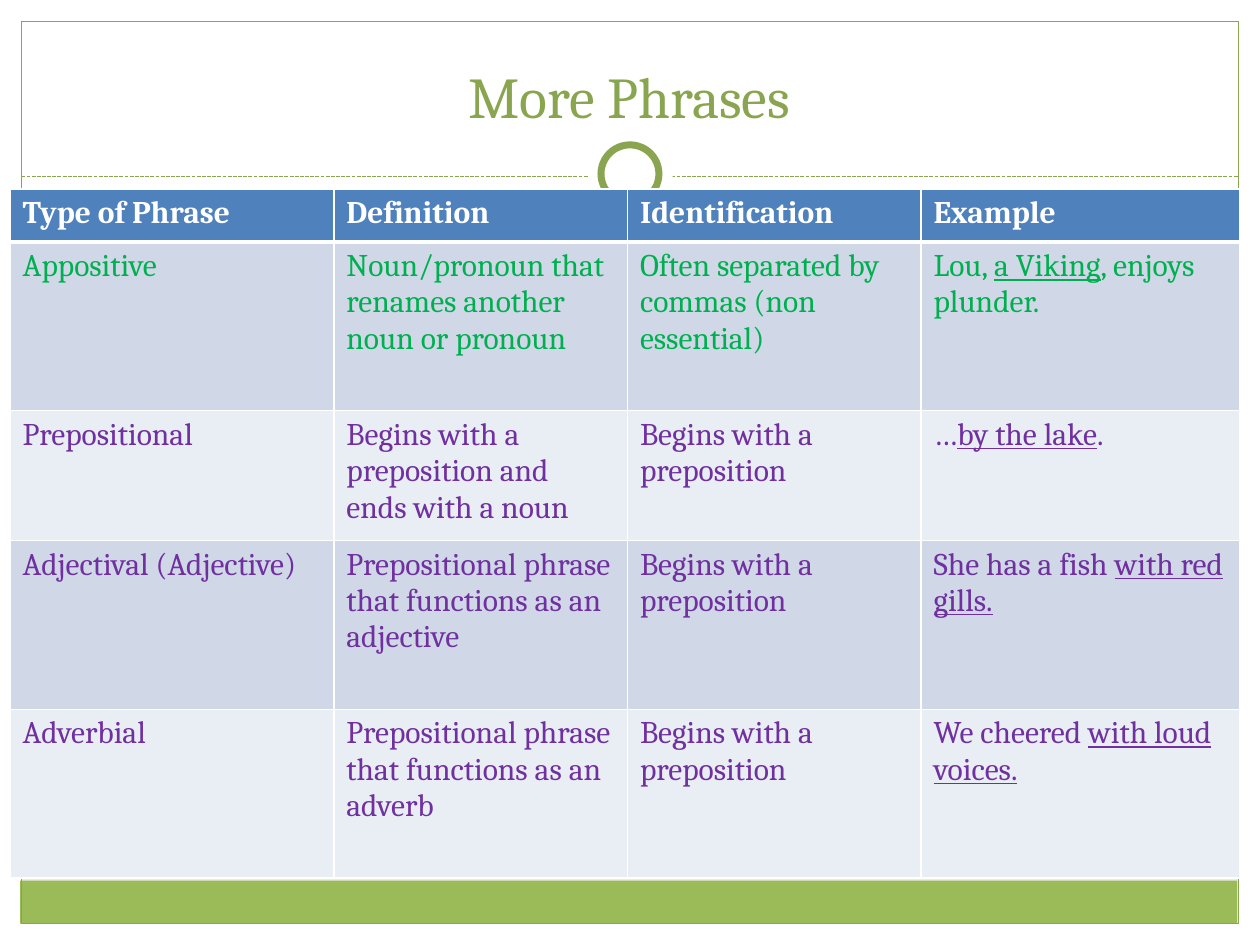
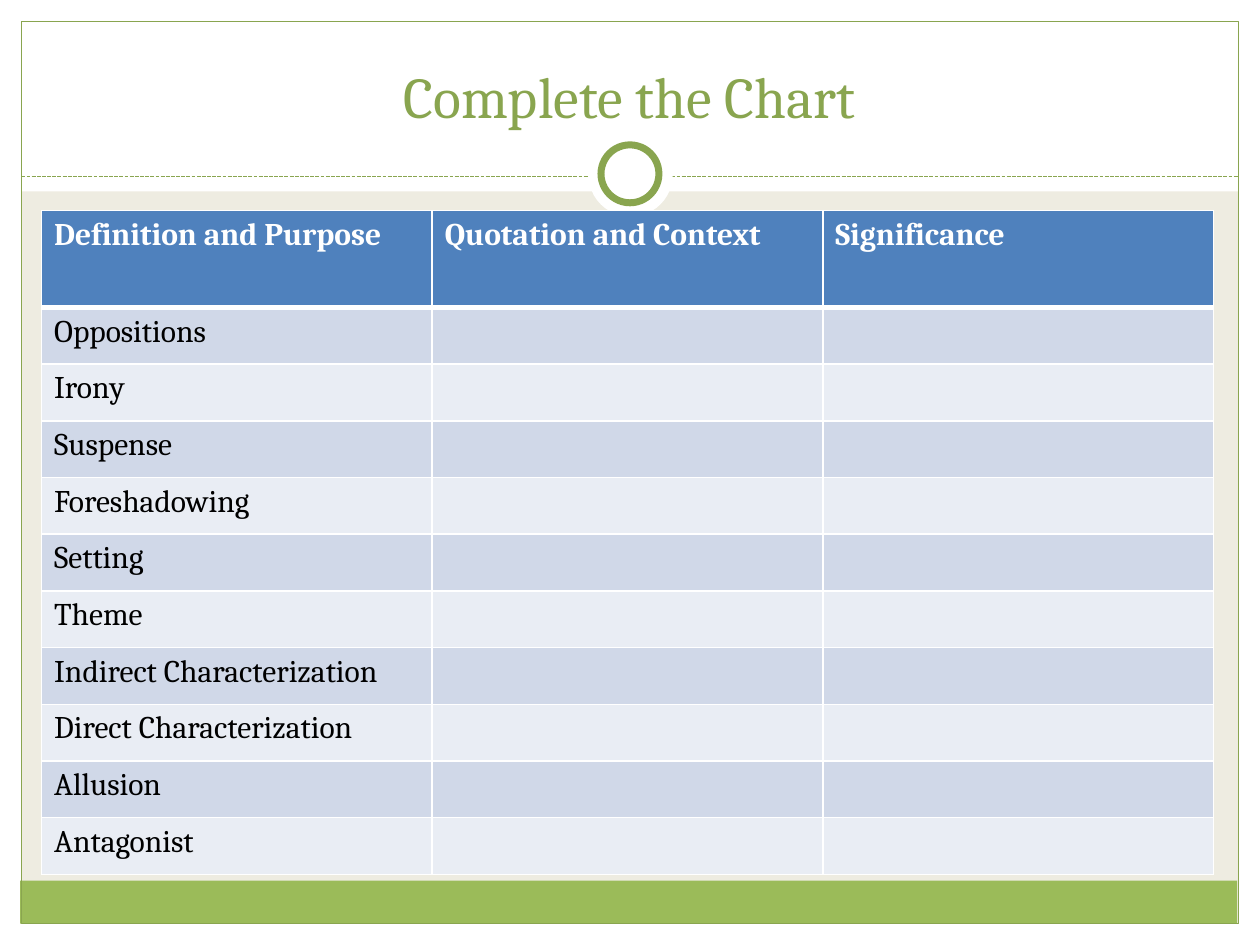
import pptx
import pptx.util
import pptx.dml.color
import pptx.enum.dml
import pptx.enum.shapes
import pptx.enum.text
import pptx.oxml
import pptx.oxml.ns
import lxml.etree

Inches = pptx.util.Inches
Pt = pptx.util.Pt
RGB = pptx.dml.color.RGBColor.from_string
SHAPE = pptx.enum.shapes.MSO_SHAPE

FONT = "Cambria"
COLORS = {
    "bg": "EEECE1", "white": "FFFFFF", "black": "000000",
    "band": "9BBB59", "accent": "89A54F", "header": "4F81BD",
    "odd": "D0D8E8", "even": "E9EDF4",
    "green": "00B050", "purple": "7030A0",
}

FRAME = [
    (SHAPE.RECTANGLE, (0, 7.33, 10, 0.17), "white", None),
    (SHAPE.RECTANGLE, (0, 0, 10, 1.52), "white", None),
    (SHAPE.RECTANGLE, (0, 0, 0.17, 7.5), "white", None),
    (SHAPE.RECTANGLE, (9.83, 0, 0.17, 7.5), "white", None),
    (SHAPE.RECTANGLE, (0.16, 6.99, 9.66, 0.34), "band", None),
    (SHAPE.RECTANGLE, (0.17, 0.17, 9.66, 7.16), None, 0.75),
]
RING = [
    (SHAPE.OVAL, (4.67, 1.05, 0.67, 0.67), "white", None),
    (SHAPE.OVAL, (4.77, 1.15, 0.46, 0.46), "white", 4),
]

TERMS = ["Oppositions", "Irony", "Suspense", "Foreshadowing", "Setting", "Theme",
         "Indirect Characterization", "Direct Characterization", "Allusion", "Antagonist"]

SLIDES = [
    {
        "title": "More Phrases",
        "at": (0.08, 1.5),
        "cols": [2.57, 2.33, 2.33, 2.53],
        "heights": [0.42, 1.34, 1.03, 1.34, 1.34],
        "inks": ["white", "green"] + ["purple"] * 3,
        "rows": [
            ["Type of Phrase", "Definition", "Identification", "Example"],
            ["Appositive", "Noun/pronoun that renames another noun or pronoun",
             "Often separated by commas (non essential)", "Lou, _a Viking_, enjoys plunder."],
            ["Prepositional", "Begins with a preposition and ends with a noun",
             "Begins with a preposition", "…_by the lake_."],
            ["Adjectival (Adjective)", "Prepositional phrase that functions as an adjective",
             "Begins with a preposition", "She has a fish _with red gills._"],
            ["Adverbial", "Prepositional phrase that functions as an adverb",
             "Begins with a preposition", "We cheered _with loud voices._"],
        ],
    },
    {
        "title": "Complete the Chart",
        "at": (0.33, 1.67),
        "cols": [3.1] * 3,
        "heights": [0.77] + [0.45] * len(TERMS),
        "inks": ["white"] + ["black"] * len(TERMS),
        "rows": [["Definition and Purpose", "Quotation and Context", "Significance"]]
                + [[term, "", ""] for term in TERMS],
    },
]


def add_shapes(s, specs):
    for kind, box, fill, width in specs:
        sp = s.shapes.add_shape(kind, *map(Inches, box))
        sp.shadow.inherit = False
        if fill:
            sp.fill.solid()
            sp.fill.fore_color.rgb = RGB(COLORS[fill])
        else:
            sp.fill.background()
        if width:
            sp.line.color.rgb = RGB(COLORS["accent"])
            sp.line.width = Pt(width)
        else:
            sp.line.fill.background()


def set_borders(cell, widths):
    tcPr = cell._tc.get_or_add_tcPr()
    for side, width in widths.items():
        tcPr.append(pptx.oxml.parse_xml(
            f'<a:ln{side} {pptx.oxml.ns.nsdecls("a")} w="{Pt(width)}"><a:solidFill>'
            f'<a:srgbClr val="{COLORS["white"]}"/></a:solidFill></a:ln{side}>'))


prs = pptx.Presentation()
prs.slide_width = Inches(10)
prs.slide_height = Inches(7.5)

for page in SLIDES:
    s = prs.slides.add_slide(prs.slide_layouts[6])
    s.background.fill.solid()
    s.background.fill.fore_color.rgb = RGB(COLORS["bg"])

    add_shapes(s, FRAME)
    rule = s.shapes.add_connector(pptx.enum.shapes.MSO_CONNECTOR.STRAIGHT,
                                  Inches(0.17), Inches(1.4), Inches(9.83), Inches(1.4))
    rule.line.color.rgb = RGB(COLORS["accent"])
    rule.line.width = Pt(0.75)
    rule.line.dash_style = pptx.enum.dml.MSO_LINE.SQUARE_DOT
    lxml.etree.SubElement(rule._element.spPr, pptx.oxml.ns.qn("a:effectLst"))
    add_shapes(s, RING)

    tf = s.shapes.add_textbox(Inches(0.33), Inches(0.25), Inches(9.33), Inches(0.83)).text_frame
    tf.word_wrap = True
    tf.vertical_anchor = pptx.enum.text.MSO_ANCHOR.BOTTOM
    tf.text = page["title"]
    p = tf.paragraphs[0]
    p.alignment = pptx.enum.text.PP_ALIGN.CENTER
    r = p.runs[0]
    r.font.name = FONT
    r.font.size = Pt(33)
    r.font.color.rgb = RGB(COLORS["accent"])

    left, top = page["at"]
    table = s.shapes.add_table(len(page["rows"]), len(page["cols"]), Inches(left), Inches(top),
                               Inches(sum(page["cols"])), Inches(sum(page["heights"]))).table
    for col, width in zip(table.columns, page["cols"]):
        col.width = Inches(width)
    for i, texts in enumerate(page["rows"]):
        table.rows[i].height = Inches(page["heights"][i])
        fill = "header" if i == 0 else "odd" if i % 2 else "even"
        for j, text in enumerate(texts):
            cell = table.cell(i, j)
            set_borders(cell, {"L": 1, "R": 1, "T": 3 if i == 1 else 1, "B": 3 if i == 0 else 1})
            cell.fill.solid()
            cell.fill.fore_color.rgb = RGB(COLORS[fill])
            p = cell.text_frame.paragraphs[0]
            for k, part in enumerate(text.split("_")):
                if part:
                    r = p.add_run()
                    r.text = part
                    r.font.name = FONT
                    r.font.size = Pt(18)
                    r.font.bold = i == 0
                    r.font.underline = k % 2 == 1
                    r.font.color.rgb = RGB(COLORS[page["inks"][i]])

prs.save("out.pptx")
